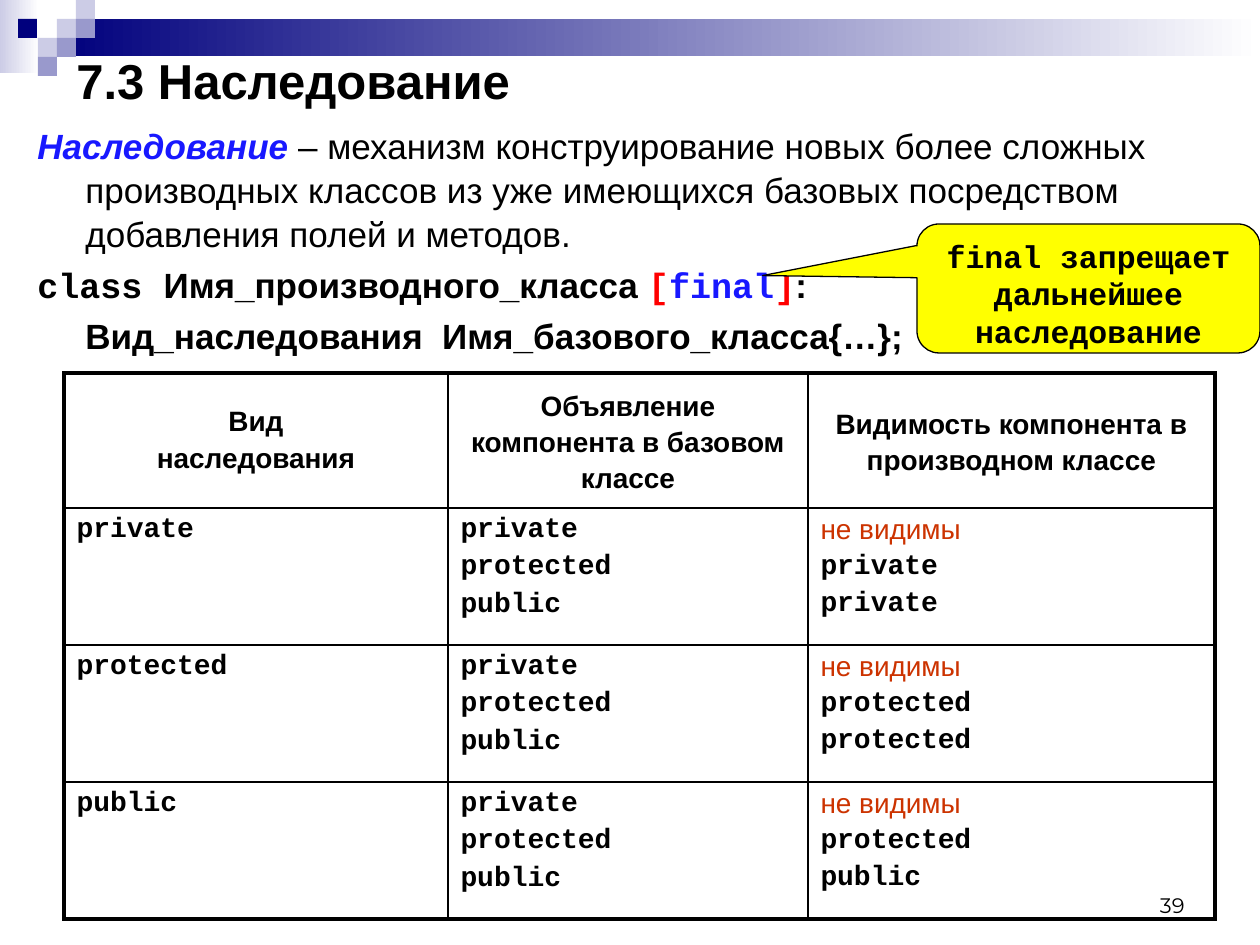
import pptx
import pptx.util
import pptx.dml.color
import pptx.enum.shapes
import pptx.enum.text
import pptx.oxml
import pptx.oxml.ns

INK = {"black": "000000", "navy": "00007D", "pale": "CCCCE6", "mid": "9999CC",
       "white": "FFFFFF", "blue": "1818FF", "red": "FF0000", "rust": "CC3300",
       "yellow": "FFFF00"}
SANS, MONO = "Arial", "Courier New"
PX = 914400 / 126
Pt = pptx.util.Pt
SHAPE = pptx.enum.shapes.MSO_SHAPE
ALIGN = pptx.enum.text.PP_ALIGN
ANCHOR = pptx.enum.text.MSO_ANCHOR


def box(kind, *place):
    """Add a shape, or a text box if kind is None, placed in px."""
    spot = [round(n * PX) for n in place]
    if kind is None:
        item = slide.shapes.add_textbox(*spot)
    else:
        item = slide.shapes.add_shape(kind, *spot)
        item.shadow.inherit = False
        item.line.fill.background()
    item.text_frame.word_wrap = True
    return item


def style(para, size, face=SANS, ink="black", bold=True):
    """Format every run of a paragraph."""
    for run in para.runs:
        run.font.size = Pt(size)
        run.font.name = face
        run.font.bold = bold
        run.font.color.rgb = pptx.dml.color.RGBColor.from_string(INK[ink])


deck = pptx.Presentation()
deck.slide_width = round(1260 * PX)
deck.slide_height = round(945 * PX)
slide = deck.slides.add_slide(deck.slide_layouts[6])

# Gradient bands
for place, ink in (((0, 0, 39, 73), "pale"), ((57, 19, 1203, 37), "navy")):
    band = box(SHAPE.RECTANGLE, *place)
    band.fill.gradient()
    band.fill.gradient_angle = 0
    for stop, tone in zip(band.fill.gradient_stops, (ink, "white")):
        stop.color.rgb = pptx.dml.color.RGBColor.from_string(INK[tone])

# Corner squares
for left, top, ink in ((57, 19, "pale"), (76, 0, "pale"), (76, 19, "mid"),
                       (38, 38, "pale"), (18, 19, "navy"), (57, 38, "mid"),
                       (38, 57, "mid")):
    tile = box(SHAPE.RECTANGLE, left, top, 19, 19)
    tile.fill.solid()
    tile.fill.fore_color.rgb = pptx.dml.color.RGBColor.from_string(INK[ink])

# Slide number
frame = box(None, 903, 861, 294, 63).text_frame
frame.text = "39"
frame.vertical_anchor = ANCHOR.BOTTOM
frame.paragraphs[0].alignment = ALIGN.RIGHT
style(frame.paragraphs[0], 12, "Montserrat", bold=False)

# Title
frame = box(None, 64, 55, 1134, 49).text_frame
frame.text = "7.3 Наследование"
frame.vertical_anchor = ANCHOR.MIDDLE
style(frame.paragraphs[0], 28)

# Definition and syntax: text, font, colour, bold
body = [
    [("Наследование", SANS, "blue", True),
     (" – механизм конструирование новых более сложных производных классов "
      "из уже имеющихся базовых посредством добавления полей и методов.",
      SANS, "black", False)],
    [("class ", MONO, "black", True),
     ("Имя_производного_класса ", SANS, "black", True),
     ("[", MONO, "red", True), ("final", MONO, "blue", True),
     ("]", MONO, "red", True), (":", SANS, "black", True)],
    [("\tВид_наследования  Имя_базового_класса{…};", SANS, "black", True)],
]
frame = box(None, 25, 116, 1211, 139).text_frame
for i, parts in enumerate(body):
    para = frame.add_paragraph() if i else frame.paragraphs[0]
    para.space_before = Pt(4)
    para.line_spacing = 1.05
    hang = round(48 * PX)
    props = para._p.get_or_add_pPr()
    props.set("marL", str(hang))
    props.set("indent", str(-hang))
    for text, face, ink, bold in parts:
        run = para.add_run()
        run.text = text
        run.font.size = Pt(20)
        run.font.name = face
        run.font.bold = bold
        run.font.color.rgb = pptx.dml.color.RGBColor.from_string(INK[ink])
frame.paragraphs[0].runs[0].font.italic = True

# Table of visibility
kinds = ["private", "protected", "public"]
rows = [["Вид\nнаследования", "Объявление компонента в базовом классе",
         "Видимость компонента в производном классе"]]
for kind, seen in zip(kinds, (["private", "private"],
                              ["protected", "protected"],
                              ["protected", "public"])):
    rows.append([kind, "\n".join(kinds), "\n".join(["не видимы"] + seen)])
wide, high = [384, 360, 407], [135, 137, 137, 137]
spot = [round(n * PX) for n in (64, 373, sum(wide), sum(high))]
table = slide.shapes.add_table(len(high), len(wide), *spot).table
table.first_row = table.horz_banding = False
for col, size in zip(table.columns, wide):
    col.width = round(size * PX)
for row, size in zip(table.rows, high):
    row.height = round(size * PX)

for r, row in enumerate(rows):
    for c, text in enumerate(row):
        cell = table.cell(r, c)
        cell.text_frame.text = text
        head = r == 0
        cell.vertical_anchor = ANCHOR.MIDDLE if head else ANCHOR.TOP
        for para in cell.text_frame.paragraphs:
            hid = para.text == "не видимы"
            para.space_before = Pt(3.2)
            para.alignment = ALIGN.CENTER if head else ALIGN.LEFT
            if head and c:
                para.line_spacing = 1.15
            style(para, 16, SANS if head or hid else MONO,
                  "rust" if hid else "black", not hid)
        # Thick outer edges, thin inner ones
        props = cell._tc.get_or_add_tcPr()
        for side, edge in (("L", c == 0), ("R", c == len(wide) - 1),
                           ("T", r == 0), ("B", r == len(high) - 1)):
            props.append(pptx.oxml.parse_xml(
                f'<a:ln{side} {pptx.oxml.ns.nsdecls("a")} '
                f'w="{Pt(2.25 if edge else 1)}"><a:solidFill>'
                f'<a:srgbClr val="{INK["black"]}"/></a:solidFill></a:ln{side}>'))
        cell.fill.background()

# Callout
note = box(SHAPE.ROUNDED_RECTANGULAR_CALLOUT, 917, 224, 343, 129)
for i, value in enumerate((-0.95, -0.1, 0.17)):
    note.adjustments[i] = value
note.fill.solid()
note.fill.fore_color.rgb = pptx.dml.color.RGBColor.from_string(INK["yellow"])
note.line.color.rgb = pptx.dml.color.RGBColor.from_string(INK["black"])
note.line.width = Pt(0.75)
frame = note.text_frame
frame.text = "final запрещает дальнейшее наследование"
frame.vertical_anchor = ANCHOR.TOP
frame.paragraphs[0].alignment = ALIGN.CENTER
frame.paragraphs[0].space_before = Pt(3.6)
style(frame.paragraphs[0], 18, MONO)

deck.save("out.pptx")
